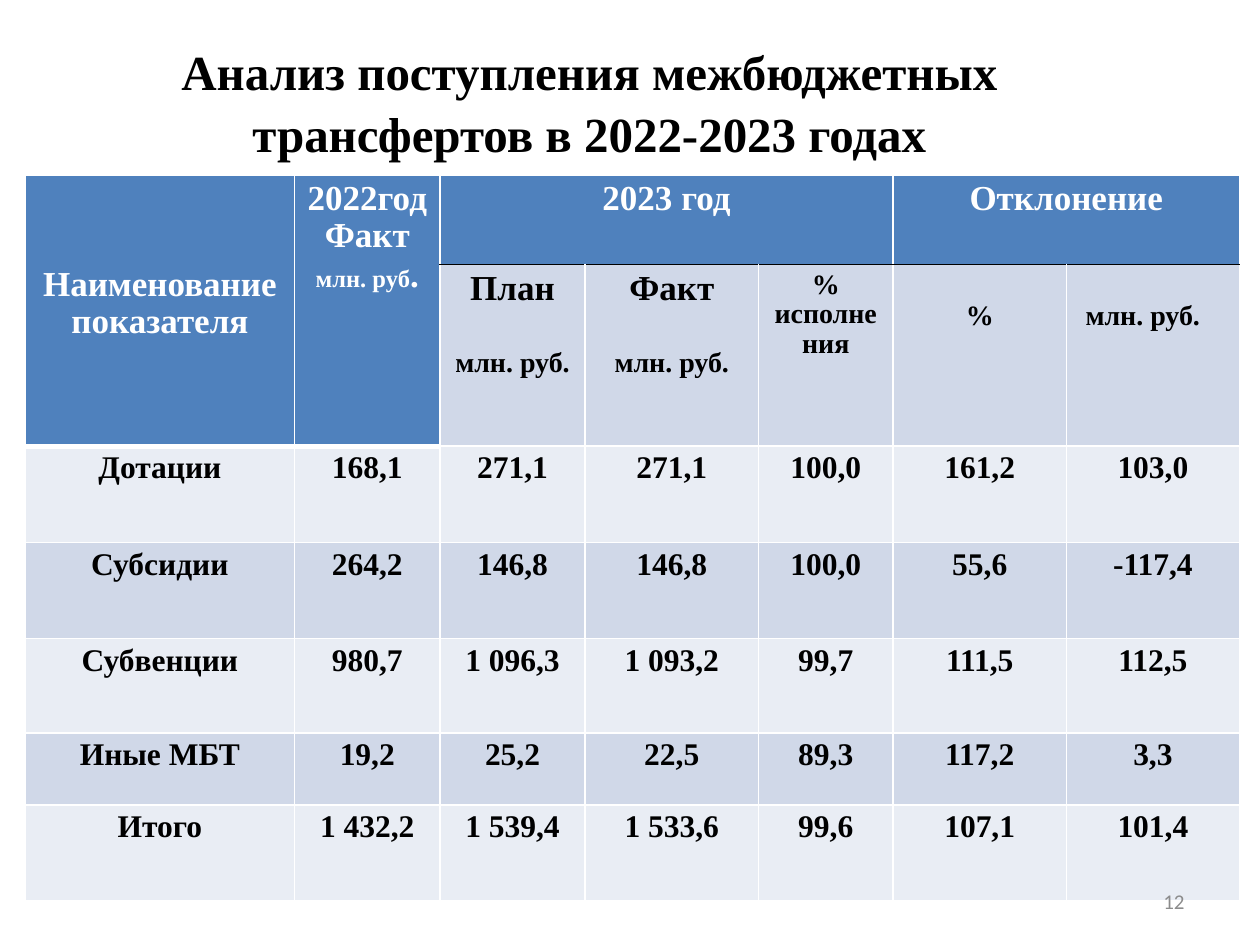
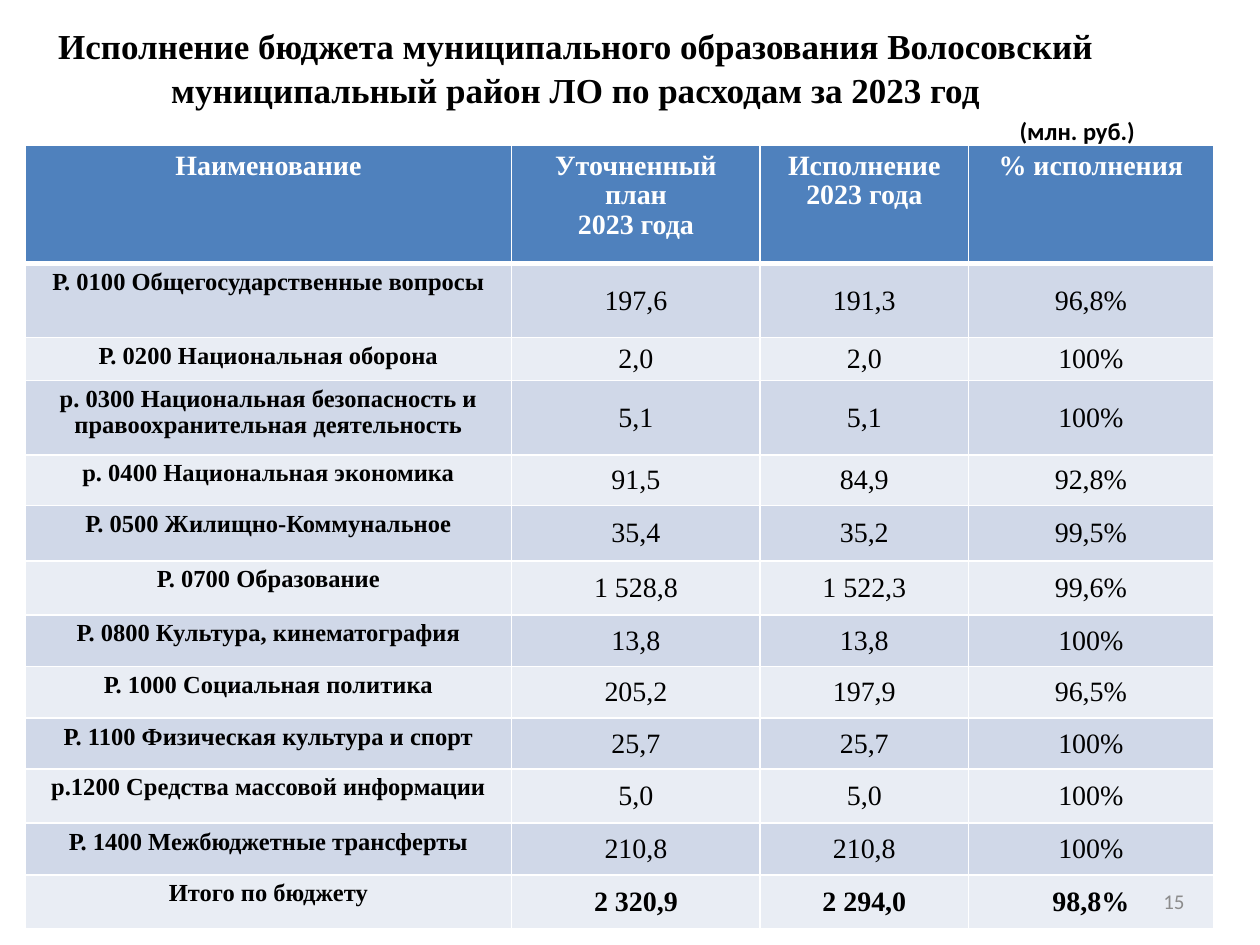
from lxml.etree import SubElement
from pptx import Presentation
from pptx.dml.color import RGBColor
from pptx.enum.text import MSO_ANCHOR as Anchor, PP_ALIGN as Align
from pptx.oxml.ns import qn
from pptx.util import Pt

BLUE, BAND_DARK, BAND_LIGHT = "4F81BD", "D0D8E8", "E9EDF4"
WHITE, BLACK, GREY = "FFFFFF", "000000", "8C8C8C"
SERIF, SANS = "Times New Roman", "Calibri"
TITLE_SPACING, TABLE_SPACING = 1.05, 0.95

TRANSFER_COLUMNS = (154, 83, 83, 99, 77, 99, 99)
TRANSFER_ROWS = (51, 104, 55, 55, 54, 41, 55)
TRANSFERS = (
    ("Дотации", "168,1", "271,1", "271,1", "100,0", "161,2", "103,0"),
    ("Субсидии", "264,2", "146,8", "146,8", "100,0", "55,6", "-117,4"),
    ("Субвенции", "980,7", "1 096,3", "1 093,2", "99,7", "111,5", "112,5"),
    ("Иные МБТ", "19,2", "25,2", "22,5", "89,3", "117,2", "3,3"),
    ("Итого", "1 432,2", "1 539,4", "1 533,6", "99,6", "107,1", "101,4"),
)

EXPENSE_COLUMNS = (278, 142, 119, 140)
EXPENSE_ROWS = (67.5, 42.5, 24.5, 42.5, 29, 31.5, 31, 29.5, 29.5, 29, 31, 29.5, 31)
EXPENSE_HEADS = (
    ["Наименование"],
    ["Уточненный план", "2023 года"],
    ["Исполнение", "2023 года"],
    ["% исполнения"],
)
EXPENSES = (
    ("Р. 0100 Общегосударственные вопросы", "197,6", "191,3", "96,8%"),
    ("Р. 0200 Национальная оборона", "2,0", "2,0", "100%"),
    ("р. 0300 Национальная безопасность и правоохранительная деятельность",
     "5,1", "5,1", "100%"),
    ("р. 0400 Национальная экономика", "91,5", "84,9", "92,8%"),
    ("Р. 0500 Жилищно-Коммунальное", "35,4", "35,2", "99,5%"),
    ("Р. 0700 Образование", "1 528,8", "1 522,3", "99,6%"),
    ("Р. 0800 Культура, кинематография", "13,8", "13,8", "100%"),
    ("Р. 1000 Социальная политика", "205,2", "197,9", "96,5%"),
    ("Р. 1100 Физическая культура и спорт", "25,7", "25,7", "100%"),
    ("р.1200 Средства массовой информации", "5,0", "5,0", "100%"),
    ("Р. 1400 Межбюджетные трансферты", "210,8", "210,8", "100%"),
    ("Итого по бюджету", "2 320,9", "2 294,0", "98,8%"),
)


def rgb(value):
    return RGBColor.from_string(value)


def write(frame, paragraphs, align=Align.CENTER, spacing=1.0, gap=0, **font):
    """Fill a frame; a paragraph is a string or a list of (text, font changes)."""
    base = dict(name=SERIF, size=18, bold=True, color=BLACK) | font
    for index, content in enumerate(paragraphs):
        paragraph = frame.paragraphs[0] if index == 0 else frame.add_paragraph()
        paragraph.alignment = align
        paragraph.line_spacing = spacing
        if index and gap:
            paragraph.space_before = Pt(gap)
        for text, changes in [(content, {})] if isinstance(content, str) else content:
            run = paragraph.add_run()
            run.text = text
            style = base | changes
            run.font.color.rgb = rgb(style.pop("color"))
            style["size"] = Pt(style["size"])
            for key, value in style.items():
                setattr(run.font, key, value)


def add_label(slide, box, text, anchor=Anchor.MIDDLE, **style):
    frame = slide.shapes.add_textbox(*map(Pt, box)).text_frame
    frame.word_wrap = True
    frame.vertical_anchor = anchor
    write(frame, [text], **style)


def add_title(slide, box, text, size):
    add_label(slide, box, text, size=size, spacing=TITLE_SPACING)


def add_page_number(slide, number):
    add_label(slide, (516, 500.5, 168, 29), number, align=Align.RIGHT,
              name=SANS, size=12, bold=False, color=GREY)


def set_border(cell, side, color=WHITE, width=1):
    """Draw one side (L, R, T or B), keeping borders ahead of the fill."""
    props = cell._tc.get_or_add_tcPr()
    tag = qn(f"a:ln{side}")
    for old in props.findall(tag):
        props.remove(old)
    line = SubElement(props, tag, w=str(Pt(width)))
    SubElement(SubElement(line, qn("a:solidFill")), qn("a:srgbClr"), val=color)
    order = [qn(f"a:ln{name}") for name in "LRTB"] + [qn("a:solidFill")]
    props[:] = sorted(props, key=lambda child: order.index(child.tag))


def set_rule(table, below_row, columns, color, width):
    """Draw a horizontal rule under a row, on both cells that share the edge."""
    for column in columns:
        set_border(table.cell(below_row, column), "B", color, width)
        set_border(table.cell(below_row + 1, column), "T", color, width)


def add_grid(slide, left, top, widths, heights, fill_of):
    table = slide.shapes.add_table(len(heights), len(widths), Pt(left), Pt(top),
                                   Pt(sum(widths)), Pt(sum(heights))).table
    for column, width in zip(table.columns, widths):
        column.width = Pt(width)
    for row, height in zip(table.rows, heights):
        row.height = Pt(height)
    for r in range(len(heights)):
        for c in range(len(widths)):
            cell = table.cell(r, c)
            cell.fill.solid()
            cell.fill.fore_color.rgb = rgb(fill_of(r, c))
            for side in "LRTB":
                set_border(cell, side)
    return table


def write_cell(table, row, column, paragraphs, margin_top=None, **style):
    cell = table.cell(row, column)
    if margin_top is not None:
        cell.margin_top = Pt(margin_top)
    write(cell.text_frame, paragraphs, spacing=TABLE_SPACING, **style)
    return cell


def add_transfer_table(slide, left, top):
    def fill_of(row, column):
        if row == 0 or (row == 1 and column < 2):
            return BLUE
        return BAND_DARK if row % 2 else BAND_LIGHT

    table = add_grid(slide, left, top, TRANSFER_COLUMNS, TRANSFER_ROWS, fill_of)
    set_rule(table, 0, range(2, 7), BLACK, 1)
    set_rule(table, 1, range(2), WHITE, 3)
    for first, last in (((0, 0), (1, 0)), ((0, 1), (1, 1)),
                        ((0, 2), (0, 4)), ((0, 5), (0, 6))):
        table.cell(*first).merge(table.cell(*last))

    head = dict(size=20, color=WHITE)
    write_cell(table, 0, 0, ["Наименование", "показателя"], margin_top=52.5, **head)
    unit = [("млн. руб", {"size": 14}), (".", {})]
    write_cell(table, 0, 1, ["2022год Факт", unit], gap=1.5, **head)
    write_cell(table, 0, 2, ["2023 год"], **head)
    write_cell(table, 0, 5, ["Отклонение"], **head)

    for column, name in ((2, "План"), (3, "Факт")):
        write_cell(table, 1, column, [[(name, {"size": 20})], "млн. руб."],
                   gap=23.5, size=16)
    write_cell(table, 1, 4, ["%", "исполнения"], size=16)
    write_cell(table, 1, 5, ["%"], margin_top=21.5, size=16)
    deviation = write_cell(table, 1, 6, ["млн. руб."], margin_top=21.5,
                           align=Align.LEFT, size=16)
    deviation.margin_left = Pt(11)

    for row, values in enumerate(TRANSFERS, start=2):
        for column, value in enumerate(values):
            write_cell(table, row, column, [value])


def add_expense_table(slide, left, top):
    def fill_of(row, column):
        if row == 0:
            return BLUE
        return BAND_DARK if row % 2 else BAND_LIGHT

    table = add_grid(slide, left, top, EXPENSE_COLUMNS, EXPENSE_ROWS, fill_of)
    set_rule(table, 0, range(4), WHITE, 3)
    for column, head in enumerate(EXPENSE_HEADS):
        write_cell(table, 0, column, head, size=16, color=WHITE)
    for row, (name, *amounts) in enumerate(EXPENSES, start=1):
        write_cell(table, row, 0, [name], size=14)
        for column, amount in enumerate(amounts, start=1):
            cell = write_cell(table, row, column, [amount], size=16,
                              bold=row == len(EXPENSES))
            cell.vertical_anchor = Anchor.MIDDLE
            cell.margin_left = cell.margin_right = cell.margin_top = Pt(0.7)
            cell.margin_bottom = 0


def build_transfers(slide):
    add_title(slide, (36.5, 15, 600.5, 85),
              "Анализ поступления межбюджетных трансфертов в 2022-2023 годах", 28)
    add_transfer_table(slide, 14.4, 100)
    add_page_number(slide, "12")


def build_expenses(slide):
    add_title(slide, (5, 9.5, 648, 57),
              "Исполнение бюджета муниципального образования Волосовский "
              "муниципальный район ЛО по расходам за 2023 год", 20)
    add_expense_table(slide, 14.4, 83)
    add_label(slide, (575.5, 62.5, 90.5, 24.5), "(млн. руб.)", anchor=Anchor.TOP,
              align=Align.LEFT, name=SANS, size=14)
    add_page_number(slide, "15")


def main():
    deck = Presentation()
    deck.slide_width, deck.slide_height = Pt(720), Pt(540)
    for build in (build_transfers, build_expenses):
        build(deck.slides.add_slide(deck.slide_layouts[6]))
    deck.save("out.pptx")


if __name__ == "__main__":
    main()
